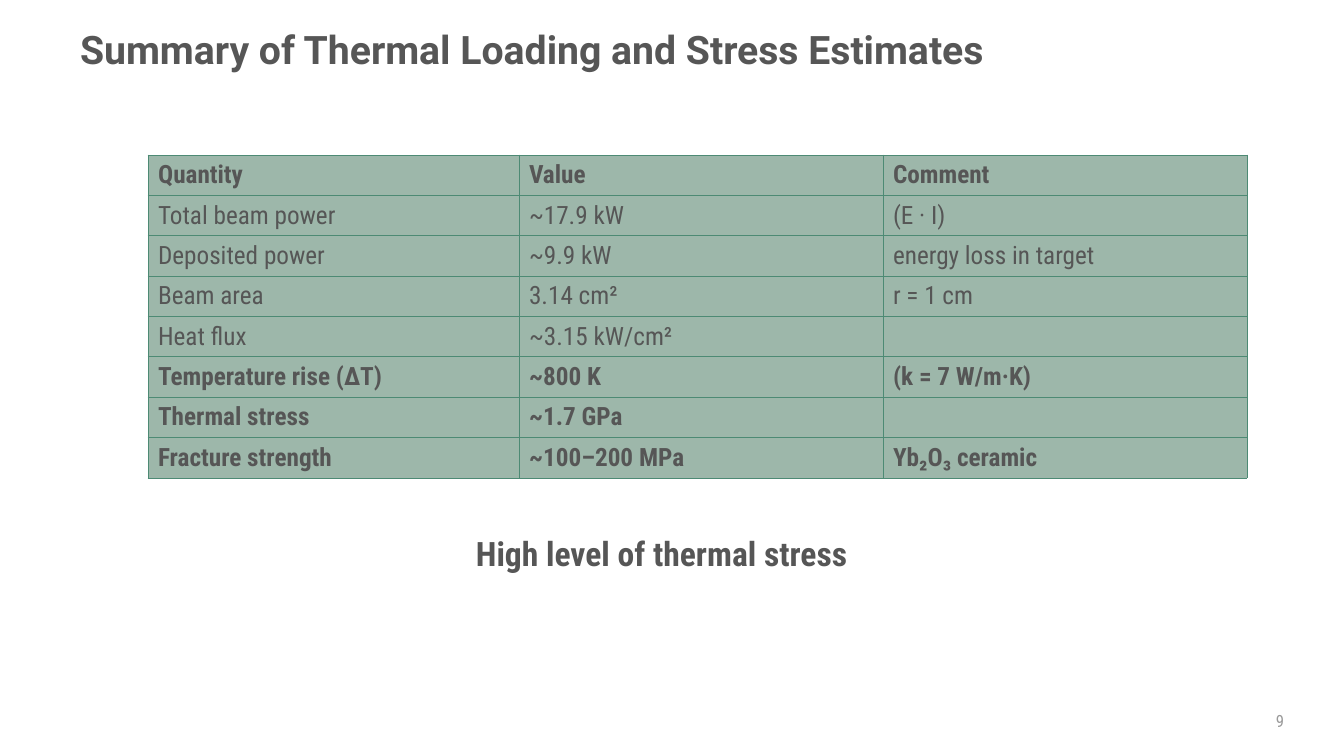
import pptx
import pptx.util
import pptx.dml.color
import pptx.enum.text
import pptx.oxml

ALIGN = pptx.enum.text.PP_ALIGN
ANCHOR = pptx.enum.text.MSO_ANCHOR

ROWS = [
    ("Quantity", "Value", "Comment"),
    ("Total beam power", "~17.9 kW", "(E · I)"),
    ("Deposited power", "~9.9 kW", "energy loss in target"),
    ("Beam area", "3.14 cm²", "r = 1 cm"),
    ("Heat flux", "~3.15 kW/cm²", ""),
    ("Temperature rise (ΔT)", "~800 K", "(k = 7 W/m·K)"),
    ("Thermal stress", "~1.7 GPa", ""),
    ("Fracture strength", "~100–200 MPa", "Yb₂O₃ ceramic"),
]
BOLD = {0, 5, 6, 7}


def px(n):
    return pptx.util.Emu(round(n * 914400 / 100.8))


def color(code):
    return pptx.dml.color.RGBColor.from_string(code)


class Deck:
    head = "Roboto"
    body = "Roboto Condensed"
    ink = "565656"
    gray = "9A9A9A"
    fill = "9DB7AA"
    edge = "4D8A74"

    def __init__(self):
        self.file = pptx.Presentation()
        self.file.slide_width = px(1344)
        self.file.slide_height = px(756)
        self.slide = self.file.slides.add_slide(self.file.slide_layouts[5])

    def add_run(self, frame, text, size, bold=False, font=body, ink=ink, align=ALIGN.LEFT):
        para = frame.paragraphs[0]
        para.alignment = align
        run = para.add_run()
        run.text = text
        run.font.name = font
        run.font.size = pptx.util.Pt(size)
        run.font.bold = bold
        run.font.color.rgb = color(ink)
        return para

    def title(self, text, left, top, width, height):
        shape = self.slide.shapes.title
        shape.left, shape.top = px(left), px(top)
        shape.width, shape.height = px(width), px(height)
        frame = shape.text_frame
        frame.auto_size = pptx.enum.text.MSO_AUTO_SIZE.NONE
        frame.vertical_anchor = ANCHOR.MIDDLE
        self.add_run(frame, text, 28, True, self.head).line_spacing = 0.9

    def text(self, text, left, top, width, height, size, anchor=ANCHOR.TOP, **style):
        box = self.slide.shapes.add_textbox(px(left), px(top), px(width), px(height))
        box.text_frame.word_wrap = True
        box.text_frame.vertical_anchor = anchor
        self.add_run(box.text_frame, text, size, **style)

    def border(self, cell):
        """Draw a thin line on all four sides of the cell."""
        props = cell._tc.get_or_add_tcPr()
        for i, side in enumerate(("lnL", "lnR", "lnT", "lnB")):
            props.insert(i, pptx.oxml.parse_xml(
                f'<a:{side} xmlns:a="http://schemas.openxmlformats.org/drawingml/2006/main"'
                f' w="6350"><a:solidFill><a:srgbClr val="{self.edge}"/></a:solidFill></a:{side}>'))

    def table(self, rows, bold, left, top, widths, pitch):
        """Fill a grid; bold holds the numbers of the bold rows."""
        grid = self.slide.shapes.add_table(
            len(rows), len(widths), px(left), px(top),
            px(sum(widths)), px(pitch * len(rows))).table
        grid.first_row = grid.horz_banding = False
        for col, width in zip(grid.columns, widths):
            col.width = px(width)
        for r, row in enumerate(rows):
            for c, text in enumerate(row):
                cell = grid.cell(r, c)
                cell.vertical_anchor = ANCHOR.MIDDLE
                cell.fill.solid()
                cell.fill.fore_color.rgb = color(self.fill)
                self.border(cell)
                if text:
                    self.add_run(cell.text_frame, text, 18, r in bold)


def main():
    deck = Deck()
    deck.text("9", 939, 701, 355, 40, 12, ANCHOR.MIDDLE, ink=deck.gray, align=ALIGN.RIGHT)
    deck.title("Summary of Thermal Loading and Stress Estimates", 70, 22, 1205, 59)
    deck.table(ROWS, BOLD, 148, 155, (371, 364, 364), 40)
    deck.text("High level of thermal stress", 466, 528, 453, 50, 24, bold=True)
    deck.file.save("out.pptx")


if __name__ == "__main__":
    main()
